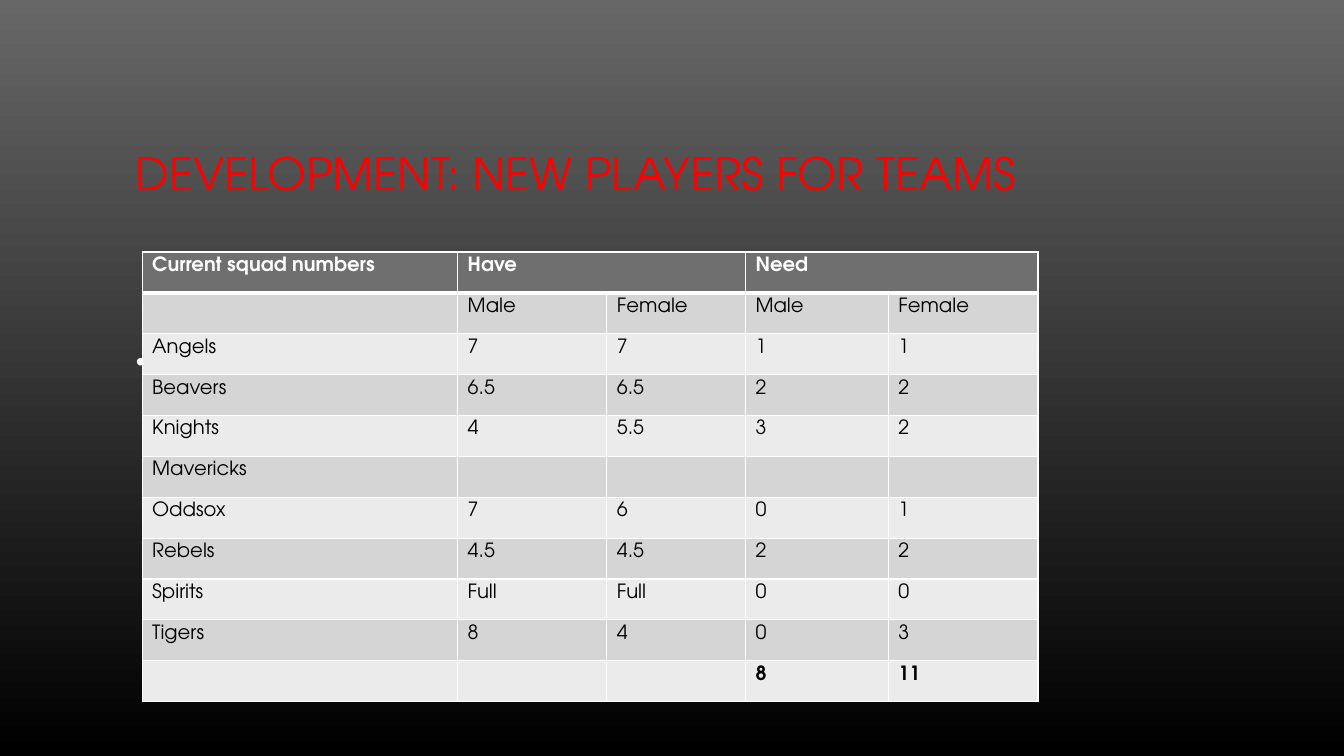
from dataclasses import dataclass
from itertools import product

from lxml.etree import SubElement
from pptx import Presentation
from pptx.dml.color import RGBColor
from pptx.enum.text import MSO_ANCHOR as Anchor
from pptx.oxml.ns import qn
from pptx.slide import Slide
from pptx.table import Table, _Cell as Cell
from pptx.text.text import TextFrame
from pptx.util import Pt


@dataclass(frozen=True)
class Theme:
    font: str = "TeX Gyre Adventor"
    bullet_font: str = "Arial"
    title: str = "FF0000"
    light: str = "FFFFFF"
    dark: str = "000000"
    header: str = "6F6F6F"
    bands: tuple[str, str] = ("EBEBEB", "D5D5D5")
    background: tuple[str, str] = ("676767", "000000")
    title_size: float = 32
    bullet_size: float = 20
    table_size: float = 14


@dataclass(frozen=True)
class Box:
    left: float
    top: float
    width: float
    height: float


@dataclass(frozen=True)
class Squad:
    name: str = ""
    have_male: str = ""
    have_female: str = ""
    need_male: str = ""
    need_female: str = ""
    bold: bool = False

    def values(self) -> tuple[str, ...]:
        return (self.name, self.have_male, self.have_female,
                self.need_male, self.need_female)


THEME = Theme()
TITLE_BOX = Box(90, 48, 780, 150)
BULLET_BOX = Box(90, 241.5, 24, 32)
TABLE_BOX = Box(101.5, 180, 640, 321.2)
COLUMN_WIDTHS = (225.4, 106.6, 99, 102, 107)
ROWS = (
    Squad("Current squad numbers", "Have", "", "Need", bold=True),
    Squad("", "Male", "Female", "Male", "Female"),
    Squad("Angels", "7", "7", "1", "1"),
    Squad("Beavers", "6.5", "6.5", "2", "2"),
    Squad("Knights", "4", "5.5", "3", "2"),
    Squad("Mavericks"),
    Squad("Oddsox", "7", "6", "0", "1"),
    Squad("Rebels", "4.5", "4.5", "2", "2"),
    Squad("Spirits", "Full", "Full", "0", "0"),
    Squad("Tigers", "8", "4", "0", "3"),
    Squad(need_male="8", need_female="11", bold=True),
)


def write_text(frame: TextFrame, text: str, *, size: float, color: str,
               bold: bool = False, font: str = THEME.font) -> None:
    run = frame.paragraphs[0].add_run()
    run.text = text
    run.font.name = font
    run.font.size = Pt(size)
    run.font.bold = bold
    run.font.color.rgb = RGBColor.from_string(color)


def add_frame(slide: Slide, box: Box, anchor: Anchor) -> TextFrame:
    shape = slide.shapes.add_textbox(
        Pt(box.left), Pt(box.top), Pt(box.width), Pt(box.height))
    frame = shape.text_frame
    frame.word_wrap = True
    frame.vertical_anchor = anchor
    return frame


def draw_borders(cell: Cell, bottom: float, top: float) -> None:
    properties = cell._tc.get_or_add_tcPr()
    widths = {"a:lnL": 1, "a:lnR": 1, "a:lnT": top, "a:lnB": bottom}
    for position, (side, width) in enumerate(widths.items()):
        line = SubElement(properties, qn(side), w=str(Pt(width)))
        fill = SubElement(line, qn("a:solidFill"))
        SubElement(fill, qn("a:srgbClr"), val=THEME.light)
        properties.insert(position, line)


def fill_cell(table: Table, row: int, column: int) -> None:
    cell = table.cell(row, column)
    squad = ROWS[row]
    is_header = row == 0
    cell.margin_top = cell.margin_bottom = Pt(3.6)
    cell.fill.solid()
    cell.fill.fore_color.rgb = RGBColor.from_string(
        THEME.header if is_header else THEME.bands[row % 2])
    draw_borders(cell, bottom=3 if is_header else 1, top=3 if row == 1 else 1)
    text = squad.values()[column]
    if text:
        write_text(cell.text_frame, text, size=THEME.table_size,
                   color=THEME.light if is_header else THEME.dark,
                   bold=squad.bold)


def add_squad_table(slide: Slide, box: Box) -> None:
    table = slide.shapes.add_table(
        len(ROWS), len(COLUMN_WIDTHS), Pt(box.left), Pt(box.top),
        Pt(box.width), Pt(box.height)).table
    for column, width in zip(table.columns, COLUMN_WIDTHS):
        column.width = Pt(width)
    for row in table.rows:
        row.height = Pt(box.height / len(ROWS))
    for row, column in product(range(len(ROWS)), range(len(COLUMN_WIDTHS))):
        fill_cell(table, row, column)
    for column in (1, 3):
        table.cell(0, column).merge(table.cell(0, column + 1))


def paint_background(slide: Slide) -> None:
    fill = slide.background.fill
    fill.gradient()
    fill.gradient_angle = 270
    for stop, color, position in zip(
            fill.gradient_stops, THEME.background, (0, 1)):
        stop.color.rgb = RGBColor.from_string(color)
        stop.position = position


def main() -> None:
    presentation = Presentation()
    presentation.slide_width, presentation.slide_height = Pt(960), Pt(540)
    slide = presentation.slides.add_slide(presentation.slide_layouts[6])
    paint_background(slide)
    write_text(add_frame(slide, TITLE_BOX, Anchor.MIDDLE),
               "DEVELOPMENT: NEW PLAYERS FOR TEAMS",
               size=THEME.title_size, color=THEME.title)
    write_text(add_frame(slide, BULLET_BOX, Anchor.TOP), "•",
               size=THEME.bullet_size, color=THEME.light,
               font=THEME.bullet_font)
    add_squad_table(slide, TABLE_BOX)
    presentation.save("out.pptx")


if __name__ == "__main__":
    main()
